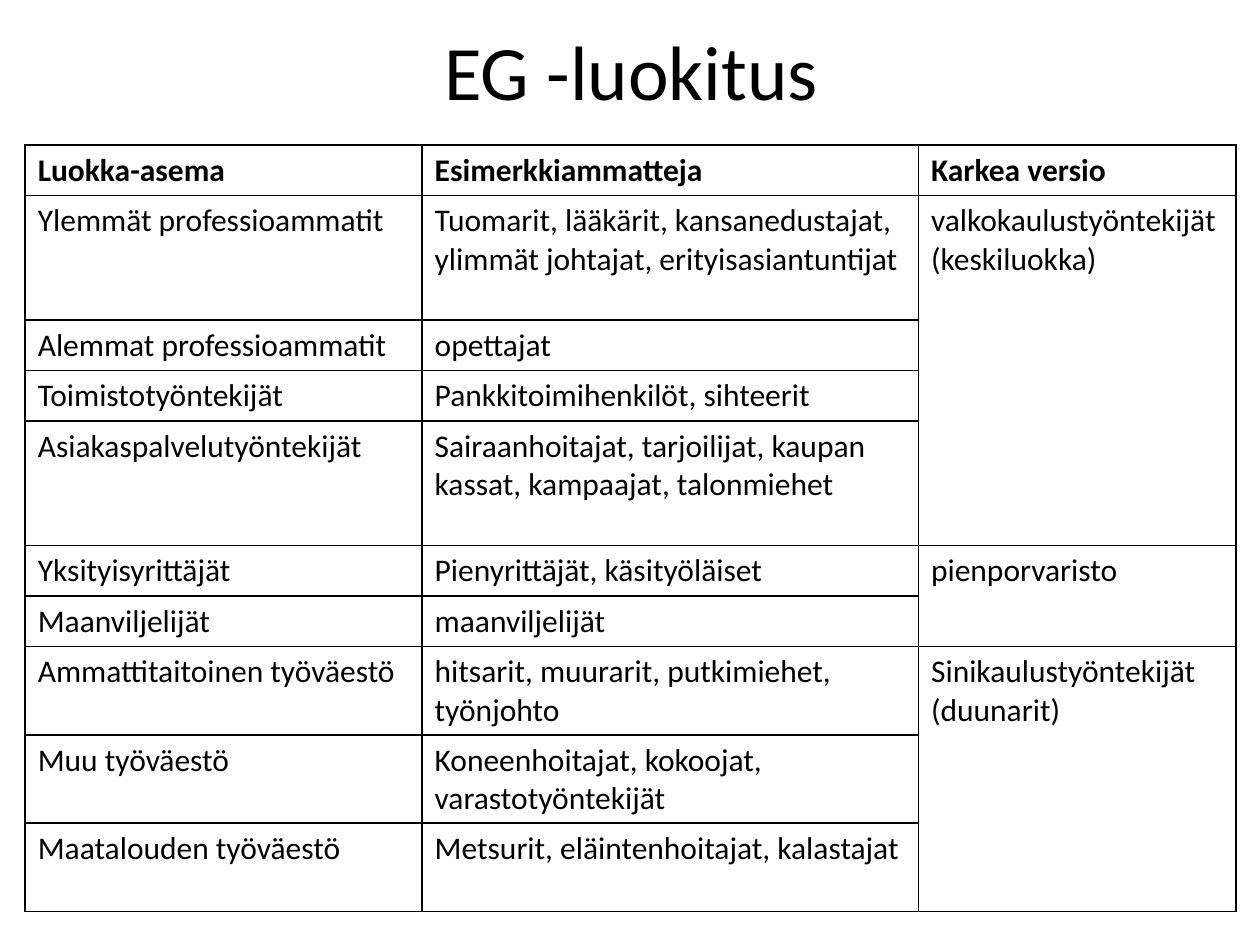
import pptx
import pptx.util
import pptx.dml.color
import pptx.enum.text
import pptx.oxml
import pptx.oxml.ns

Inches = pptx.util.Inches
COLORS = {"text": "000000", "border": "000000", "background": "FFFFFF"}
FONT = "Calibri"
TITLE = "EG -luokitus"
HEADERS = ("Luokka-asema", "Esimerkkiammatteja", "Karkea versio")
GROUPS = [
    ("valkokaulustyöntekijät (keskiluokka)", [
        ("Ylemmät professioammatit",
         "Tuomarit, lääkärit, kansanedustajat, ylimmät johtajat, erityisasiantuntijat", 0.99),
        ("Alemmat professioammatit", "opettajat", 0.4),
        ("Toimistotyöntekijät", "Pankkitoimihenkilöt, sihteerit", 0.4),
        ("Asiakaspalvelutyöntekijät",
         "Sairaanhoitajat, tarjoilijat, kaupan kassat, kampaajat, talonmiehet", 0.99),
    ]),
    ("pienporvaristo", [
        ("Yksityisyrittäjät", "Pienyrittäjät, käsityöläiset", 0.4),
        ("Maanviljelijät", "maanviljelijät", 0.4),
    ]),
    ("Sinikaulustyöntekijät (duunarit)", [
        ("Ammattitaitoinen työväestö", "hitsarit, muurarit, putkimiehet, työnjohto", 0.7),
        ("Muu työväestö", "Koneenhoitajat, kokoojat, varastotyöntekijät", 0.7),
        ("Maatalouden työväestö", "Metsurit, eläintenhoitajat, kalastajat", 0.7),
    ]),
]
COLUMN_WIDTHS = (3.15, 3.94, 2.52)
HEADER_HEIGHT = 0.4
BORDER_POINTS = 1


def write(text_frame, text, size, bold=False):
    run = text_frame.paragraphs[0].add_run()
    run.text = text
    values = {"name": FONT, "size": pptx.util.Pt(size), "bold": bold}
    for name, value in values.items():
        setattr(run.font, name, value)
    run.font.color.rgb = pptx.dml.color.RGBColor.from_string(COLORS["text"])


def format_cell(cell):
    properties = cell._tc.get_or_add_tcPr()
    for side in ("lnL", "lnR", "lnT", "lnB"):
        properties.append(pptx.oxml.parse_xml(
            f'<a:{side} {pptx.oxml.ns.nsdecls("a")} w="{pptx.util.Pt(BORDER_POINTS)}">'
            f'<a:solidFill><a:srgbClr val="{COLORS["border"]}"/></a:solidFill></a:{side}>'))
    cell.fill.background()


def add_title(slide):
    shape = slide.shapes.add_textbox(Inches(0.51), Inches(0), Inches(9), Inches(1.1))
    shape.text_frame.word_wrap = True
    shape.text_frame.vertical_anchor = pptx.enum.text.MSO_ANCHOR.MIDDLE
    write(shape.text_frame, TITLE, 44)
    shape.text_frame.paragraphs[0].alignment = pptx.enum.text.PP_ALIGN.CENTER


def add_class_table(slide):
    heights = [HEADER_HEIGHT] + [height for _, rows in GROUPS for _, _, height in rows]
    table = slide.shapes.add_table(
        len(heights), len(HEADERS), Inches(0.2), Inches(1.15),
        Inches(sum(COLUMN_WIDTHS)), Inches(sum(heights))).table
    table.horz_banding = False
    for column, width in zip(table.columns, COLUMN_WIDTHS):
        column.width = Inches(width)
    for row, height in zip(table.rows, heights):
        row.height = Inches(height)
    for cell in table.iter_cells():
        format_cell(cell)
    for column, header in enumerate(HEADERS):
        write(table.cell(0, column).text_frame, header, 18, bold=True)
    first = 1
    for group, rows in GROUPS:
        last = first + len(rows) - 1
        table.cell(first, 2).merge(table.cell(last, 2))
        write(table.cell(first, 2).text_frame, group, 18)
        for index, (position, examples, _) in enumerate(rows, first):
            write(table.cell(index, 0).text_frame, position, 18)
            write(table.cell(index, 1).text_frame, examples, 18)
        first = last + 1


def main():
    presentation = pptx.Presentation()
    presentation.slide_width = Inches(10)
    presentation.slide_height = Inches(7.5)
    slide = presentation.slides.add_slide(presentation.slide_layouts[6])
    slide.background.fill.solid()
    slide.background.fill.fore_color.rgb = pptx.dml.color.RGBColor.from_string(COLORS["background"])
    add_title(slide)
    add_class_table(slide)
    presentation.save("out.pptx")


if __name__ == "__main__":
    main()
